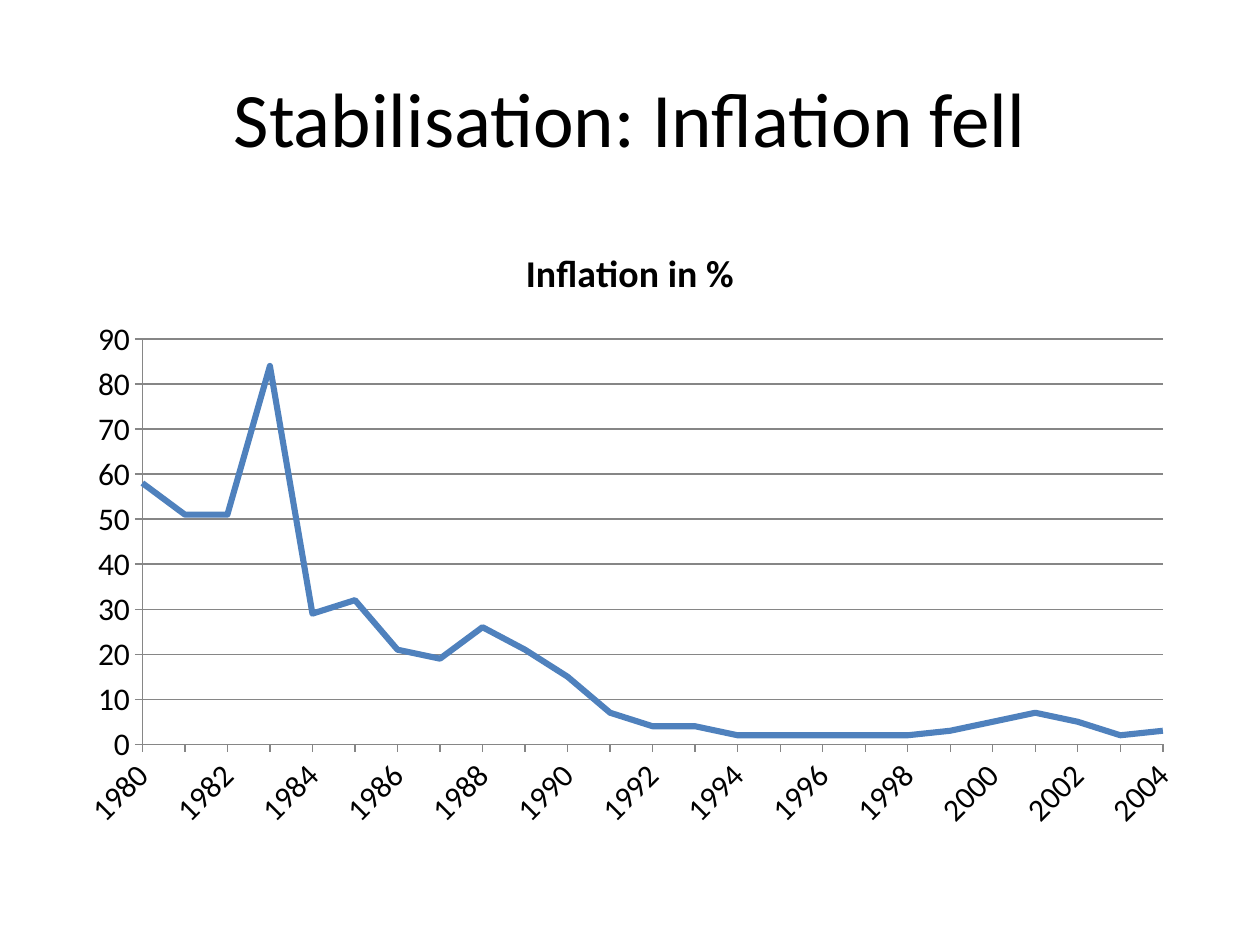
from dataclasses import dataclass

from lxml import etree
from pptx import Presentation
from pptx.chart.data import CategoryChartData
from pptx.dml.color import RGBColor
from pptx.enum.chart import XL_CHART_TYPE, XL_MARKER_STYLE, XL_TICK_MARK
from pptx.enum.text import MSO_ANCHOR, PP_ALIGN
from pptx.oxml.ns import qn
from pptx.util import Inches, Pt

LINE = XL_CHART_TYPE.LINE
NO_MARKER = XL_MARKER_STYLE.NONE
OUTSIDE, NO_TICK = XL_TICK_MARK.OUTSIDE, XL_TICK_MARK.NONE
MIDDLE = MSO_ANCHOR.MIDDLE
CENTER = PP_ALIGN.CENTER

HEADING = "Stabilisation: Inflation fell"
CHART_HEADING = "Inflation in %"
FIRST_YEAR = 1980
INFLATION = [58, 51, 51, 84, 29, 32, 21, 19, 26, 21, 15, 7, 4,
             4, 2, 2, 2, 2, 2, 3, 5, 7, 5, 2, 3]
HEADING_BOX = (0.5, 0.3, 9, 1.25)
CHART_BOX = (0.5, 1.75, 9, 4.95)
PLOT_LAYOUT = {"layoutTarget": "inner", "xMode": "edge", "yMode": "edge",
               "x": 0.07, "y": 0.19, "w": 0.9, "h": 0.65}


@dataclass(frozen=True)
class Theme:
    font: str = "Calibri"
    text: RGBColor = RGBColor(0, 0, 0)
    series: RGBColor = RGBColor(0x4F, 0x81, 0xBD)
    axis: RGBColor = RGBColor(0x86, 0x86, 0x86)
    heading_size: float = 44
    chart_heading_size: float = 21.6
    label_size: float = 18
    series_width: float = 3.5
    axis_width: float = 0.75


THEME = Theme()


def format_font(font, size, bold=False):
    font.name = THEME.font
    font.size = Pt(size)
    font.bold = bold
    font.color.rgb = THEME.text


def write(frame, text, size, bold=False):
    paragraph = frame.paragraphs[0]
    paragraph.alignment = CENTER
    run = paragraph.add_run()
    run.text = text
    format_font(run.font, size, bold)


def format_line(line, color, width):
    line.color.rgb = color
    line.width = Pt(width)


def add_heading(slide):
    frame = slide.shapes.add_textbox(*map(Inches, HEADING_BOX)).text_frame
    frame.word_wrap = True
    frame.vertical_anchor = MIDDLE
    write(frame, HEADING, size=THEME.heading_size)


def place_plot(chart):
    plot_area = chart.plots[0]._element.getparent()
    for old in plot_area.findall(qn("c:layout")):
        plot_area.remove(old)
    layout = etree.Element(qn("c:layout"))
    manual = etree.SubElement(layout, qn("c:manualLayout"))
    for setting, value in PLOT_LAYOUT.items():
        etree.SubElement(manual, qn(f"c:{setting}"), val=str(value))
    plot_area.insert(0, layout)


def format_axes(chart):
    years, percent = chart.category_axis, chart.value_axis
    for axis in (years, percent):
        axis.major_tick_mark = OUTSIDE
        axis.minor_tick_mark = NO_TICK
        format_font(axis.tick_labels.font, THEME.label_size)
        format_line(axis.format.line, THEME.axis, THEME.axis_width)
    percent.minimum_scale, percent.maximum_scale, percent.major_unit = 0, 90, 10
    percent.has_major_gridlines = True
    format_line(percent.major_gridlines.format.line, THEME.axis, THEME.axis_width)
    crossing = etree.Element(qn("c:crossBetween"), val="midCat")
    percent._element.find(qn("c:crosses")).addnext(crossing)

    year_xml = years._element
    year_xml.find(qn("c:txPr")).find(qn("a:bodyPr")).set("rot", "-2700000")
    skip = etree.Element(qn("c:tickLblSkip"), val="2")
    year_xml.find(qn("c:noMultiLvlLbl")).addprevious(skip)


def add_inflation_chart(slide):
    chart_data = CategoryChartData()
    chart_data.categories = [str(FIRST_YEAR + i) for i in range(len(INFLATION))]
    chart_data.add_series(CHART_HEADING, INFLATION)
    chart = slide.shapes.add_chart(LINE, *map(Inches, CHART_BOX), chart_data).chart
    format_font(chart.font, THEME.label_size)
    chart.has_legend = False
    chart.has_title = True
    write(chart.chart_title.text_frame, CHART_HEADING,
          size=THEME.chart_heading_size, bold=True)
    chart.chart_title.include_in_layout = False
    chart.plots[0].vary_by_categories = False
    inflation = chart.plots[0].series[0]
    inflation.smooth = False
    inflation.marker.style = NO_MARKER
    format_line(inflation.format.line, THEME.series, THEME.series_width)
    format_axes(chart)
    place_plot(chart)


def main():
    """Build the slide on falling inflation and save it."""
    deck = Presentation()
    deck.slide_width, deck.slide_height = Inches(10), Inches(7.5)
    slide = deck.slides.add_slide(deck.slide_layouts[6])
    add_heading(slide)
    add_inflation_chart(slide)
    deck.save("out.pptx")


if __name__ == "__main__":
    main()
